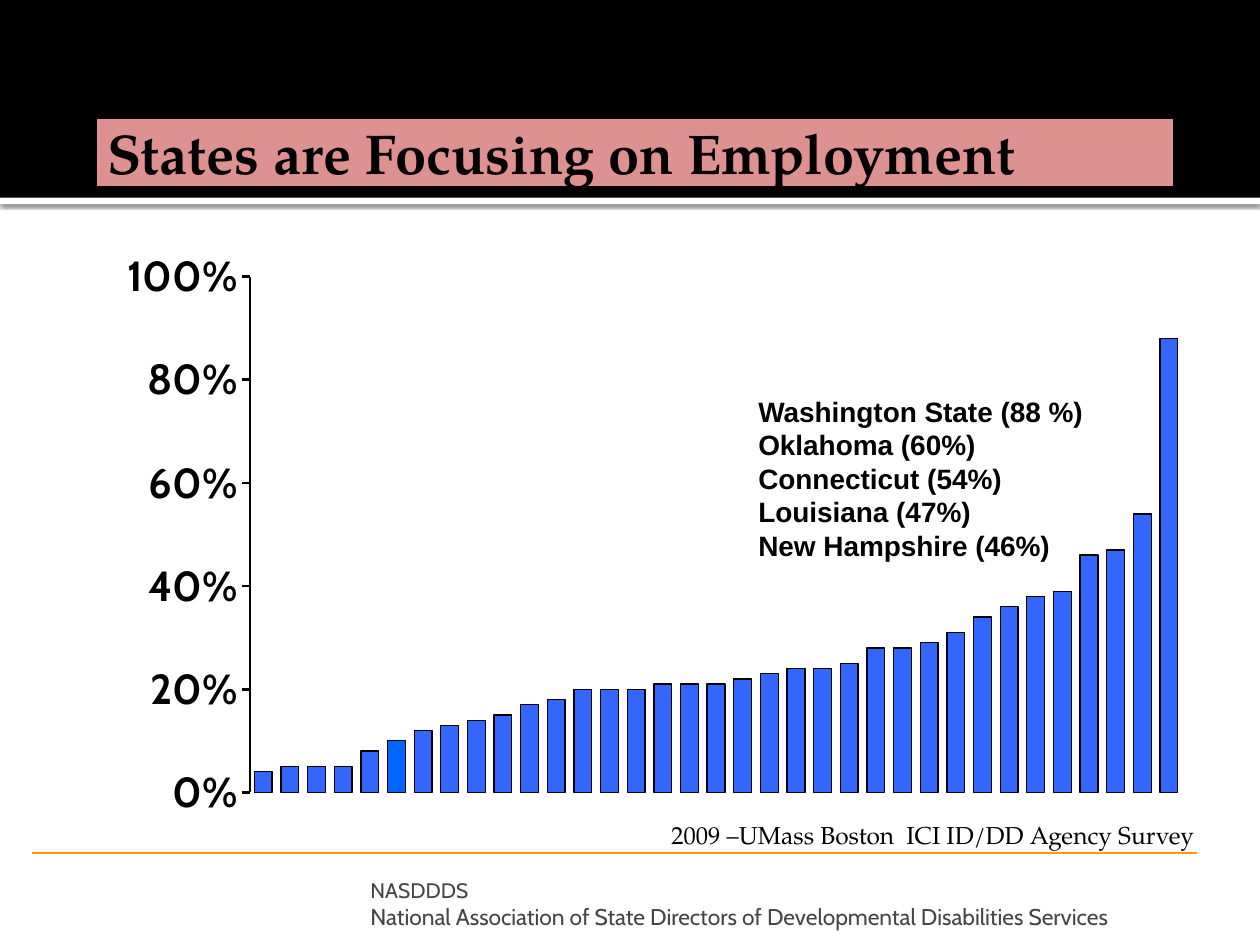
import pptx
import pptx.chart.data
import pptx.dml.color
import pptx.enum.chart
import pptx.enum.shapes
import pptx.enum.text
import pptx.oxml
import pptx.oxml.ns
import pptx.util
from pptx.util import Inches

TITLE = "States are Focusing on Employment"
RATES = [4, 5, 5, 5, 8, 10, 12, 13, 14, 15, 17, 18, 20, 20, 20, 21, 21, 21,
         22, 23, 24, 24, 25, 28, 28, 29, 31, 34, 36, 38, 39, 46, 47, 54, 88]
MARKED = 5
LEADERS = ["Washington State (88 %)", "Oklahoma (60%)", "Connecticut (54%)",
           "Louisiana (47%)", "New Hampshire (46%)"]
SOURCE = "2009 –UMass Boston  ICI ID/DD Agency Survey"
FOOTER = [("NASDDDS", 12),
          ("National Association of State Directors of Developmental Disabilities Services", 13)]
PLOT = {"x": 0.14, "y": 0.06, "w": 0.84, "h": 0.89}
COLORS = {"black": "000000", "white": "FFFFFF", "rose": "DD9191", "rule": "FF9900",
          "bar": "3366FF", "mark": "0066FF", "gray": "454545"}
SERIF, SANS, PLAIN = "TeX Gyre Pagella", "Cabin", "Arial"
ALIGN = pptx.enum.text.PP_ALIGN
ANCHOR = pptx.enum.text.MSO_ANCHOR


def color(name):
    return pptx.dml.color.RGBColor.from_string(COLORS[name])


def paint(fill, name):
    fill.solid()
    fill.fore_color.rgb = color(name)


def stroke(line, name, width):
    line.color.rgb = color(name)
    line.width = pptx.util.Pt(width)


def style(font, face, size, name="black", bold=False):
    font.name, font.size, font.bold = face, pptx.util.Pt(size), bold
    font.color.rgb = color(name)


def nested(tag, body=""):
    return pptx.oxml.parse_xml(f"<{tag} {pptx.oxml.ns.nsdecls('a', 'c')}>{body}</{tag}>")


def band(slide, top, height, name):
    kind = pptx.enum.shapes.MSO_SHAPE.RECTANGLE
    shape = slide.shapes.add_shape(kind, 0, Inches(top), Inches(10), Inches(height))
    shape.shadow.inherit = False
    paint(shape.fill, name)
    shape.line.fill.background()
    return shape


def text_box(slide, place, lines):
    frame = slide.shapes.add_textbox(*map(Inches, place)).text_frame
    frame.word_wrap = True
    frame.text = "\n".join(lines)
    return frame


def add_frame(slide):
    strip = band(slide, 1.57, 0.05, "white")
    glow = strip.element.spPr.find(pptx.oxml.ns.qn("a:effectLst"))
    glow.append(nested("a:outerShdw", '<a:srgbClr val="000000"><a:alpha val="60000"/></a:srgbClr>'))
    for key, value in {"blurRad": 31750, "dist": 10160, "dir": 5400000}.items():
        glow[0].set(key, str(value))
    band(slide, 0, 1.57, "black")
    rule = slide.shapes.add_connector(pptx.enum.shapes.MSO_CONNECTOR.STRAIGHT,
                                      Inches(0.25), Inches(6.77), Inches(9.5), Inches(6.77))
    stroke(rule.line, "rule", 1.5)
    rule.element.spPr.append(nested("a:effectLst"))


def add_title(slide):
    title = slide.shapes.title
    title.left, title.top, title.width, title.height = map(Inches, (0.75, 0.92, 8.58, 0.58))
    paint(title.fill, "rose")
    stroke(title.line, "black", 3)
    frame = title.text_frame
    frame.text = TITLE
    frame.auto_size = pptx.enum.text.MSO_AUTO_SIZE.NONE
    frame.vertical_anchor = ANCHOR.MIDDLE
    frame.margin_right = Inches(0.05)
    frame.paragraphs[0].alignment = ALIGN.LEFT
    style(frame.paragraphs[0].font, SERIF, 32, bold=True)
    title.element.getparent().append(title.element)


def add_rates(slide):
    data = pptx.chart.data.CategoryChartData(number_format="0%")
    data.categories = [str(n) for n in range(1, len(RATES) + 1)]
    data.add_series("Series 1", [rate / 100 for rate in RATES])
    kind = pptx.enum.chart.XL_CHART_TYPE.COLUMN_CLUSTERED
    place = map(Inches, (0.75, 1.92, 8.81, 4.6))
    chart = slide.shapes.add_chart(kind, *place, data).chart
    chart.has_legend = chart.has_title = False
    style(chart.font, SANS, 18)
    chart.category_axis.visible = False

    axis = chart.value_axis
    axis.minimum_scale, axis.maximum_scale, axis.major_unit = 0, 1, 0.2
    axis.has_major_gridlines = False
    axis.major_tick_mark = pptx.enum.chart.XL_TICK_MARK.OUTSIDE
    axis.tick_labels.number_format = "0%"
    axis.tick_labels.number_format_is_linked = False
    style(axis.tick_labels.font, SANS, 24, bold=True)
    stroke(axis.format.line, "black", 1.5)

    plot = chart.plots[0]
    plot.gap_width, plot.vary_by_categories = 50, False
    bars = plot.series[0]
    for item, name in ((bars, "bar"), (bars.points[MARKED], "mark")):
        paint(item.format.fill, name)
        stroke(item.format.line, "black", 0.75)

    modes = '<c:layoutTarget val="inner"/><c:xMode val="edge"/><c:yMode val="edge"/>'
    sizes = "".join(f'<c:{key} val="{value}"/>' for key, value in PLOT.items())
    area = chart.element.find(".//" + pptx.oxml.ns.qn("c:plotArea"))
    for old in area.findall(pptx.oxml.ns.qn("c:layout")):
        area.remove(old)
    area.insert(0, nested("c:layout", f"<c:manualLayout>{modes}{sizes}</c:manualLayout>"))


def add_notes(slide):
    source = text_box(slide, (2.75, 6.46, 6.83, 0.33), [SOURCE]).paragraphs[0]
    source.alignment = ALIGN.RIGHT
    style(source.font, SERIF, 14)

    for line in text_box(slide, (5.92, 3.08, 3, 1.45), LEADERS).paragraphs:
        style(line.font, PLAIN, 16, bold=True)

    frame = text_box(slide, (2.89, 7.08, 6.02, 0.3), [])
    frame.vertical_anchor = ANCHOR.BOTTOM
    frame.margin_left = frame.margin_right = Inches(0.05)
    frame.margin_bottom = 0
    for index, (words, size) in enumerate(FOOTER):
        if index:
            frame.paragraphs[0].add_line_break()
        run = frame.paragraphs[0].add_run()
        run.text = words
        style(run.font, SANS, size, "gray")


def main():
    deck = pptx.Presentation()
    deck.slide_width, deck.slide_height = Inches(10), Inches(7.5)
    slide = deck.slides.add_slide(deck.slide_layouts[5])
    add_frame(slide)
    add_title(slide)
    add_rates(slide)
    add_notes(slide)
    deck.save("out.pptx")


if __name__ == "__main__":
    main()
